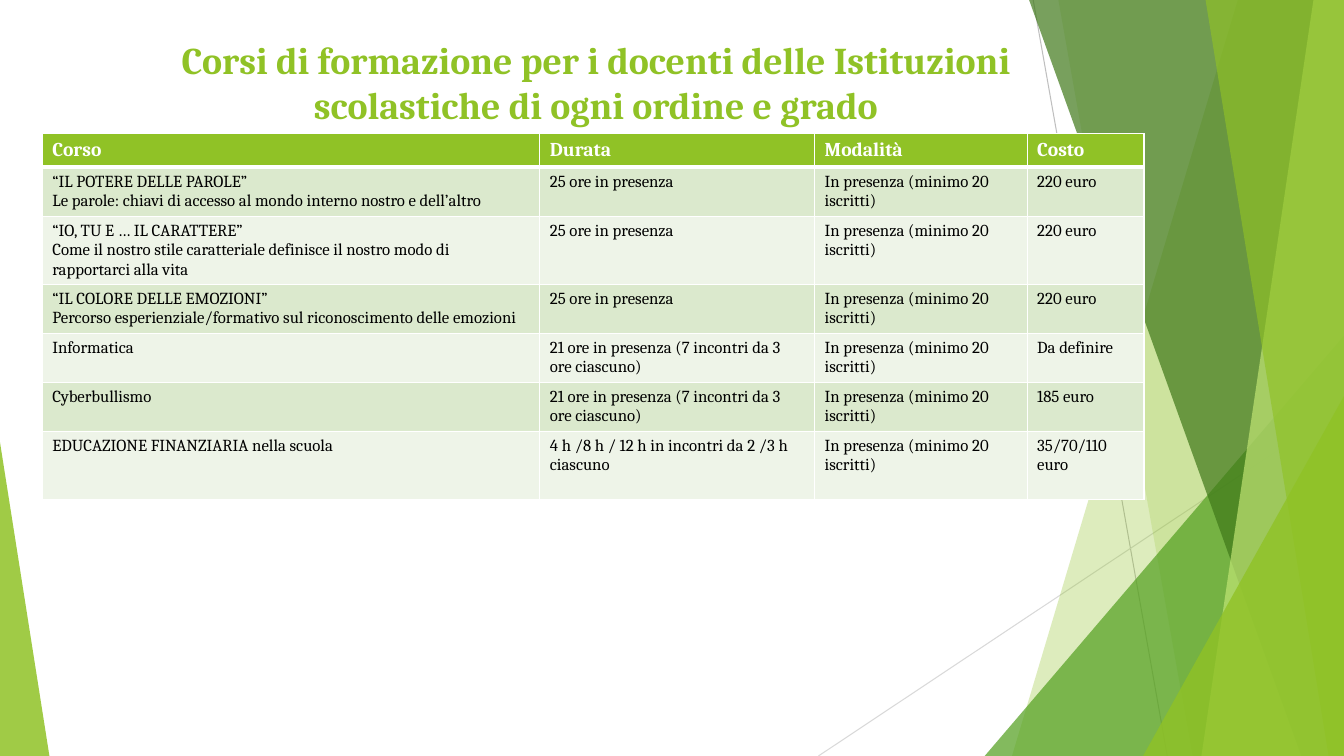
"""Builds a slide listing training courses for teachers beside a green faceted border."""
from dataclasses import dataclass
from typing import Any

import pptx
import pptx.dml.color
import pptx.dml.fill
import pptx.enum.shapes
import pptx.enum.text
import pptx.oxml
import pptx.oxml.ns
import pptx.shapes.base
import pptx.slide
import pptx.table
import pptx.text.text
import pptx.util

Pt = pptx.util.Pt
WIDTH, HEIGHT = 960, 540


@dataclass(frozen=True)
class Theme:
    font: str = "Cambria"
    green: str = "90C226"
    leaf: str = "54A021"
    forest: str = "3F7819"
    lime: str = "C0E474"
    band_dark: str = "DBE9CD"
    band_light: str = "EEF4E8"
    white: str = "FFFFFF"
    black: str = "000000"
    line_dark: str = "BFBFBF"
    line_light: str = "D9D9D9"
    title_size: float = 27
    header_size: float = 14
    body_size: float = 12


@dataclass(frozen=True)
class Ray:
    start: tuple[float, float]
    end: tuple[float, float]
    color: str


@dataclass(frozen=True)
class Facet:
    top_x: float
    bottom_x: float
    color: str
    opacity: int


@dataclass(frozen=True)
class Corner:
    left: float
    top: float
    width: float
    apex: float
    color: str
    opacity: int


@dataclass(frozen=True)
class Course:
    name: str
    duration: str
    cost: str
    height: float = 35
    mode: str = "In presenza (minimo 20 iscritti)"


THEME = Theme()
RAYS = [
    Ray((738, 0), (833.8, HEIGHT), THEME.line_dark),
    Ray((WIDTH, 290.2), (584.6, HEIGHT), THEME.line_light),
]
DECOR = [
    Facet(884.2, 722.9, THEME.green, 30),
    Facet(756, 851.8, THEME.green, 20),
    Corner(703.4, 239.8, 256.6, 1, THEME.leaf, 72),
    Facet(735.1, 929.5, THEME.forest, 70),
    Facet(938.2, 858.2, THEME.lime, 70),
    Facet(861.1, 949, THEME.green, 65),
    Corner(816.5, 283, 143.5, 1, THEME.green, 80),
    Corner(0, 316, 35.3, 0, THEME.green, 85),
]
TITLE = "Corsi di formazione per i docenti delle Istituzioni scolastiche di ogni ordine e grado"
HEADERS = ["Corso", "Durata", "Modalità", "Costo"]
HEADER_HEIGHT = 24
COLUMN_WIDTHS = [355.4, 196.3, 151.8, 83.5]
IN_PERSON = "25 ore in presenza"
SEVEN_MEETINGS = "21 ore in presenza (7 incontri da 3 ore ciascuno)"
COURSES = [
    Course("“IL POTERE DELLE PAROLE”\n"
           "Le parole: chiavi di accesso al mondo interno nostro e dell’altro", IN_PERSON, "220 euro"),
    Course("“IO, TU E … IL CARATTERE”\nCome il nostro stile caratteriale definisce "
           "il nostro modo di rapportarci alla vita", IN_PERSON, "220 euro", 48.6),
    Course("“IL COLORE DELLE EMOZIONI”\n"
           "Percorso esperienziale/formativo sul riconoscimento delle emozioni", IN_PERSON, "220 euro"),
    Course("Informatica", SEVEN_MEETINGS, "Da definire"),
    Course("Cyberbullismo", SEVEN_MEETINGS, "185 euro"),
    Course("EDUCAZIONE FINANZIARIA nella scuola",
           "4 h /8 h / 12 h in incontri da 2 /3 h ciascuno", "35/70/110 euro", 48.6),
]


def rgb(color: str) -> pptx.dml.color.RGBColor:
    return pptx.dml.color.RGBColor.from_string(color)


def apply(target: Any, formats: dict[str, Any]) -> None:
    for name, value in formats.items():
        setattr(target, name, value)


def paint(fill: pptx.dml.fill.FillFormat, color: str) -> None:
    fill.solid()
    fill.fore_color.rgb = rgb(color)


def style_text(tf: pptx.text.text.TextFrame, size: float, color: str, bold: bool) -> None:
    for p in tf.paragraphs:
        for r in p.runs:
            apply(r.font, {"name": THEME.font, "size": Pt(size), "bold": bold})
            r.font.color.rgb = rgb(color)


def finish(sp: pptx.shapes.base.BaseShape, color: str, opacity: int) -> None:
    sp.shadow.inherit = False
    paint(sp.fill, color)
    sp.line.fill.background()
    clr = sp.element.spPr.find(".//" + pptx.oxml.ns.qn("a:srgbClr"))
    clr.append(pptx.oxml.parse_xml(
        f'<a:alpha {pptx.oxml.ns.nsdecls("a")} val="{opacity * 1000}"/>'))


def draw_ray(s: pptx.slide.Slide, ray: Ray) -> None:
    cxn = s.shapes.add_connector(
        pptx.enum.shapes.MSO_CONNECTOR.STRAIGHT, *map(Pt, ray.start + ray.end))
    cxn.line.width = Pt(0.75)
    cxn.line.color.rgb = rgb(ray.color)
    cxn.element.spPr.append(pptx.oxml.parse_xml(f'<a:effectLst {pptx.oxml.ns.nsdecls("a")}/>'))


def draw_facet(s: pptx.slide.Slide, facet: Facet) -> None:
    builder = s.shapes.build_freeform(Pt(facet.top_x), 0)
    corners = [(WIDTH, 0), (WIDTH, HEIGHT), (facet.bottom_x, HEIGHT)]
    builder.add_line_segments([(Pt(x), Pt(y)) for x, y in corners], close=True)
    finish(builder.convert_to_shape(), facet.color, facet.opacity)


def draw_corner(s: pptx.slide.Slide, corner: Corner) -> None:
    sp = s.shapes.add_shape(
        pptx.enum.shapes.MSO_SHAPE.ISOSCELES_TRIANGLE,
        Pt(corner.left), Pt(corner.top), Pt(corner.width), Pt(HEIGHT - corner.top))
    sp.adjustments[0] = corner.apex
    finish(sp, corner.color, corner.opacity)


def draw_title(s: pptx.slide.Slide) -> None:
    sp = s.shapes.title
    s.shapes.element.append(sp.element)
    apply(sp, {"left": Pt(95.8), "top": Pt(22.3), "width": Pt(659.5), "height": Pt(90)})
    tf = sp.text_frame
    tf.text = TITLE
    apply(tf, {"word_wrap": True, "auto_size": pptx.enum.text.MSO_AUTO_SIZE.NONE,
               "vertical_anchor": pptx.enum.text.MSO_ANCHOR.TOP})
    tf.paragraphs[0].alignment = pptx.enum.text.PP_ALIGN.CENTER
    style_text(tf, THEME.title_size, THEME.green, True)


def set_borders(cell: pptx.table._Cell, top: float, bottom: float) -> None:
    tc_pr = cell._tc.get_or_add_tcPr()
    for i, (side, width) in enumerate({"L": 1, "R": 1, "T": top, "B": bottom}.items()):
        tc_pr.insert(i, pptx.oxml.parse_xml(
            f'<a:ln{side} {pptx.oxml.ns.nsdecls("a")} w="{Pt(width)}"><a:solidFill>'
            f'<a:srgbClr val="{THEME.white}"/></a:solidFill></a:ln{side}>'))


def draw_table(s: pptx.slide.Slide) -> None:
    rows = [HEADERS] + [[c.name, c.duration, c.mode, c.cost] for c in COURSES]
    heights = [HEADER_HEIGHT] + [c.height for c in COURSES]
    table = s.shapes.add_table(len(rows), len(HEADERS), Pt(30.2), Pt(95.5),
                               Pt(sum(COLUMN_WIDTHS)), Pt(sum(heights))).table
    table.horz_banding = False
    for column, width in zip(table.columns, COLUMN_WIDTHS):
        column.width = Pt(width)
    for i, (texts, height) in enumerate(zip(rows, heights)):
        table.rows[i].height = Pt(height)
        header = i == 0
        fill = THEME.green if header else THEME.band_dark if i % 2 else THEME.band_light
        size = THEME.header_size if header else THEME.body_size
        color = THEME.white if header else THEME.black
        for j, text in enumerate(texts):
            cell = table.cell(i, j)
            cell.text_frame.text = text
            style_text(cell.text_frame, size, color, header)
            paint(cell.fill, fill)
            set_borders(cell, 3 if i == 1 else 1, 3 if header else 1)


def main() -> None:
    prs = pptx.Presentation()
    apply(prs, {"slide_width": Pt(WIDTH), "slide_height": Pt(HEIGHT)})
    s = prs.slides.add_slide(prs.slide_layouts.get_by_name("Title Only"))
    for ray in RAYS:
        draw_ray(s, ray)
    for part in DECOR:
        if isinstance(part, Facet):
            draw_facet(s, part)
        else:
            draw_corner(s, part)
    draw_title(s)
    draw_table(s)
    prs.save("out.pptx")


if __name__ == "__main__":
    main()
